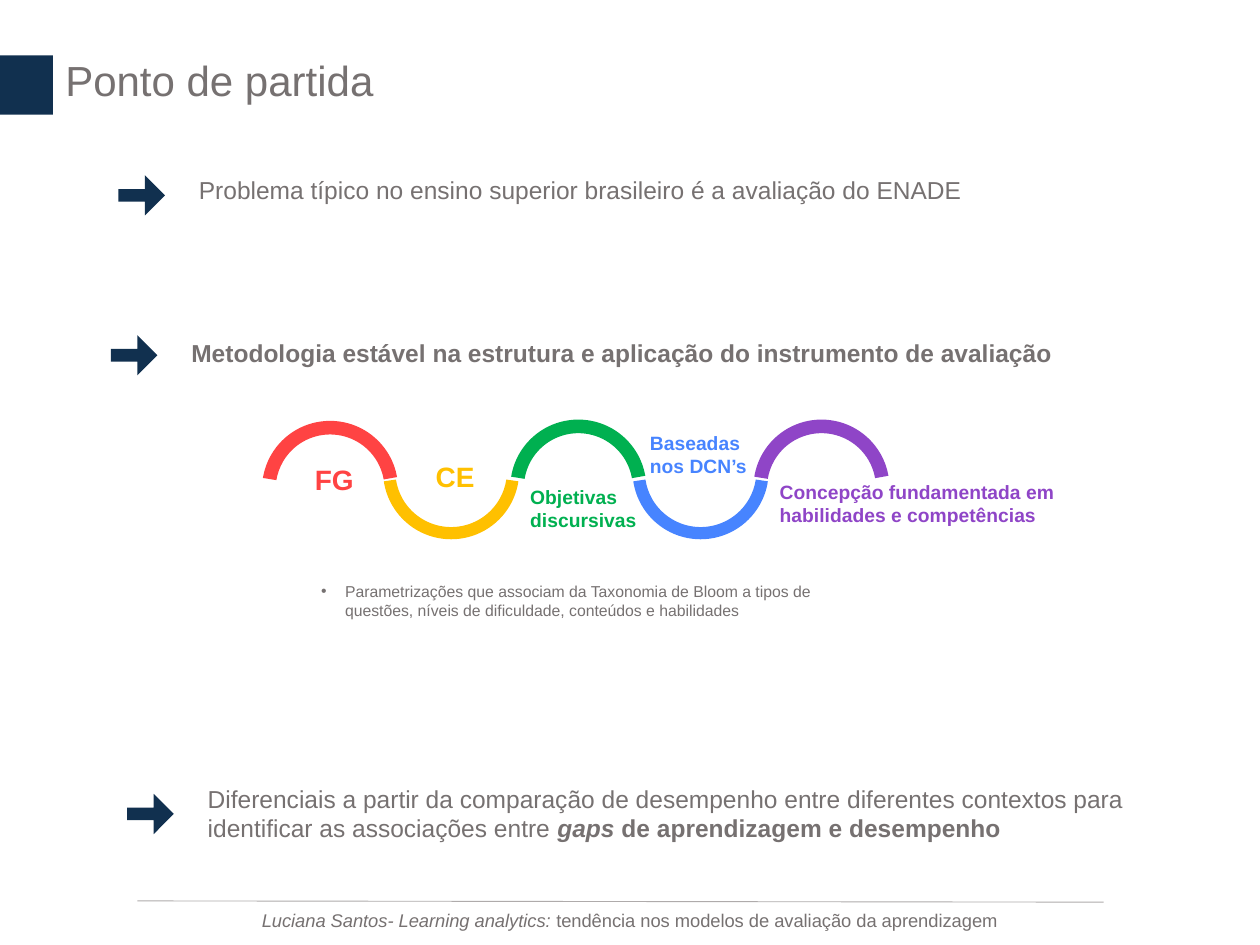
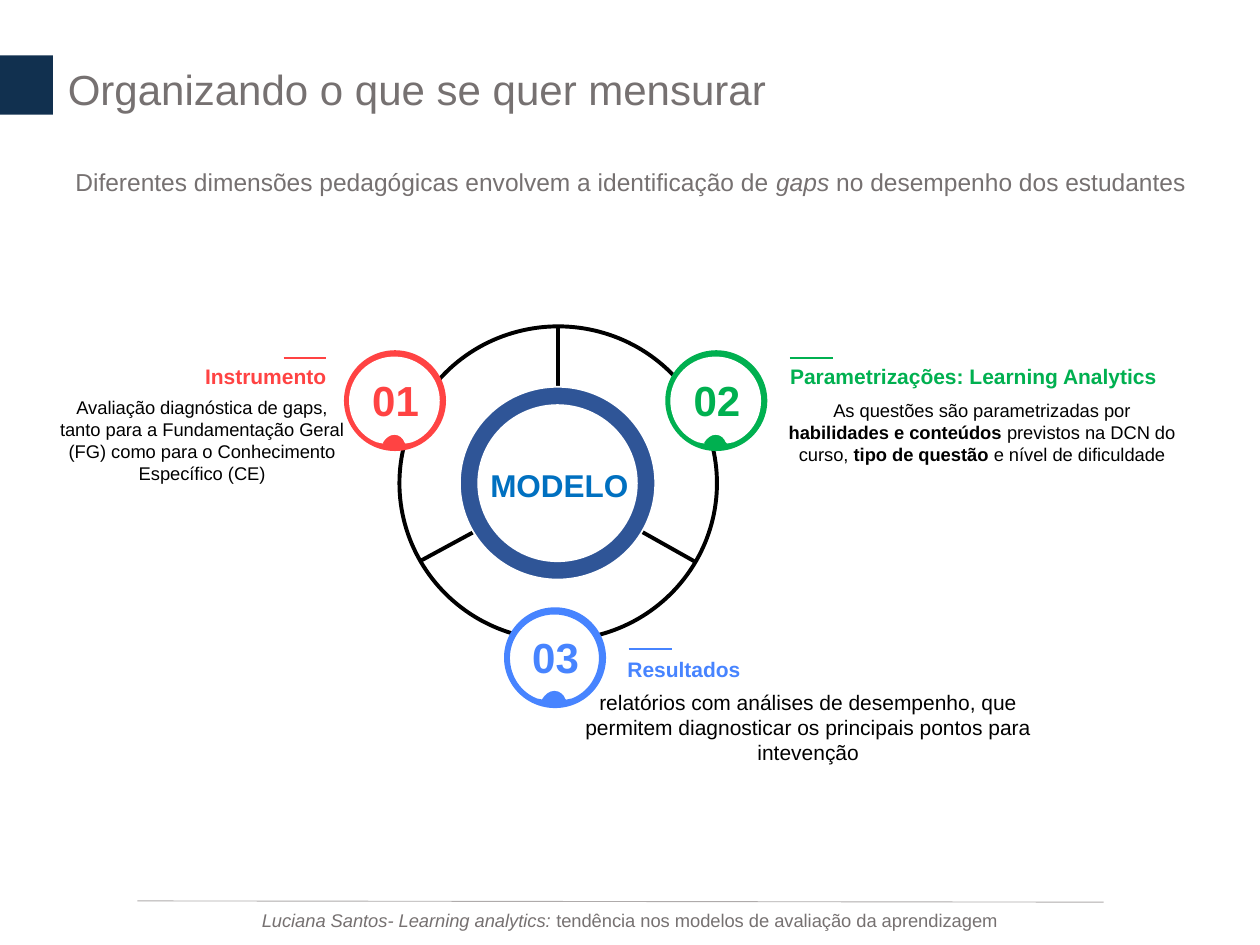
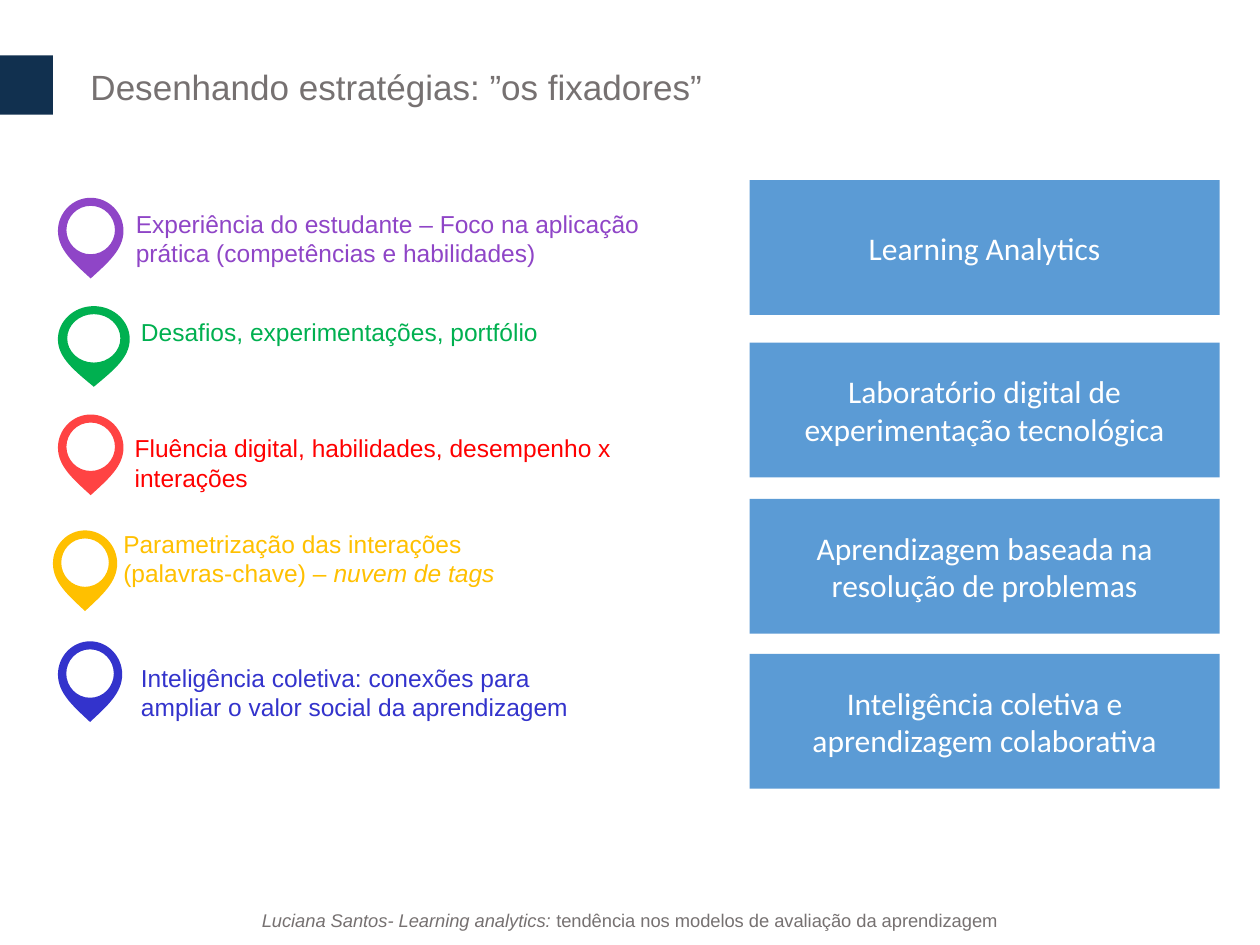
from dataclasses import dataclass

from lxml import etree
from pptx import Presentation
from pptx.dml.color import RGBColor
from pptx.enum import shapes, text
from pptx.oxml.ns import qn
from pptx.util import Inches, Pt

NAVY, GREY, RULE_GREY = "11304F", "767171", "AFABAB"
RED, YELLOW, GREEN, BLUE, PURPLE = "FF4343", "FFC000", "00B050", "4784FF", "8F45C7"
BLACK, WHITE, CARD_BLUE = "000000", "FFFFFF", "5B9BD5"
SHAPE = shapes.MSO_SHAPE
LEFT, CENTER, RIGHT = text.PP_ALIGN.LEFT, text.PP_ALIGN.CENTER, text.PP_ALIGN.RIGHT
TOP, MIDDLE, BOTTOM = text.MSO_ANCHOR.TOP, text.MSO_ANCHOR.MIDDLE, text.MSO_ANCHOR.BOTTOM

Box = tuple[float, float, float, float]
Point = tuple[float, float]
Segment = tuple[Point, ...]


@dataclass(frozen=True)
class Contour:
    """A closed outline; one-point segments are lines, three-point ones are curves."""
    start: Point
    segments: tuple[Segment, ...]


@dataclass(frozen=True)
class Run:
    words: str
    bold: bool = False
    italic: bool = False


@dataclass(frozen=True)
class Style:
    size: float
    color: str = GREY
    bold: bool = False
    align: text.PP_ALIGN = LEFT
    anchor: text.MSO_ANCHOR = TOP
    spacing: float | None = None
    padded: bool = True
    font: str = "Arial"


Words = str | list[Run]


@dataclass(frozen=True)
class Topic:
    left: float
    arrow_top: float
    text_top: float
    height: float
    words: Words
    bold: bool = False


@dataclass(frozen=True)
class WaveStep:
    left: float
    top: float
    color: str
    label: str
    label_box: Box
    size: float = 11


@dataclass(frozen=True)
class Stage:
    number: str
    color: str
    badge: Point
    rule: Point
    heading: str
    heading_box: Box
    detail: Words
    detail_box: Box
    detail_size: float = 10.5
    align: text.PP_ALIGN = LEFT
    rimmed: bool = False


@dataclass(frozen=True)
class Pin:
    left: float
    top: float
    width: float
    color: str
    words: Words
    text_box: Box
    text_color: str


ARROW = Contour((0.21, 0.32), (
    ((0.21, 0.21),), ((0, 0.21),), ((0, 0.11),), ((0.21, 0.11),), ((0.21, 0),), ((0.37, 0.16),)))
NOTCHED_DISC = Contour((0.4, 0.05), (
    ((0.6, 0.05), (0.76, 0.21), (0.76, 0.4)),
    ((0.76, 0.55), (0.67, 0.68), (0.54, 0.73)),
    ((0.49, 0.74),), ((0.48, 0.73),),
    ((0.47, 0.7), (0.44, 0.67), (0.4, 0.67)),
    ((0.36, 0.67), (0.33, 0.7), (0.31, 0.73)),
    ((0.31, 0.74),), ((0.26, 0.73),),
    ((0.13, 0.68), (0.04, 0.55), (0.04, 0.4)),
    ((0.04, 0.21), (0.2, 0.05), (0.4, 0.05))))
# The pin is drawn in a unit square and stretched to its box.
PIN_DROP = Contour((0.5, 0), (
    ((0.22, 0), (0, 0.19), (0, 0.41)),
    ((0, 0.64), (0.23, 0.8), (0.5, 1)),
    ((0.77, 0.8), (1, 0.64), (1, 0.41)),
    ((1, 0.19), (0.78, 0), (0.5, 0))))
PIN_HOLE = Contour((0.5, 0.7), (
    ((0.29, 0.7), (0.13, 0.56), (0.13, 0.4)),
    ((0.13, 0.24), (0.29, 0.1), (0.5, 0.1)),
    ((0.71, 0.1), (0.87, 0.24), (0.87, 0.4)),
    ((0.87, 0.56), (0.71, 0.7), (0.5, 0.7))))


def rgb(color: str) -> RGBColor:
    return RGBColor.from_string(color)


def lengths(*values: float) -> list[int]:
    return [Inches(value) for value in values]


def write(frame, words: Words, style: Style):
    frame.word_wrap = True
    frame.vertical_anchor = style.anchor
    if not style.padded:
        frame.margin_left = frame.margin_right = frame.margin_top = frame.margin_bottom = 0
    paragraph = frame.paragraphs[0]
    paragraph.alignment = style.align
    if style.spacing:
        paragraph.line_spacing = style.spacing
    font = paragraph.font
    font.name, font.size, font.bold = style.font, Pt(style.size), style.bold
    font.color.rgb = rgb(style.color)
    for part in [Run(words)] if isinstance(words, str) else words:
        run = paragraph.add_run()
        run.text = part.words
        if part.bold:
            run.font.bold = True
        if part.italic:
            run.font.italic = True
    return paragraph


def add_text(slide, box: Box, words: Words, style: Style):
    return write(slide.shapes.add_textbox(*lengths(*box)).text_frame, words, style)


def paint(shape, fill: str | None, line: str | None = None, width: float = 1) -> None:
    shape.shadow.inherit = False
    if fill:
        shape.fill.solid()
        shape.fill.fore_color.rgb = rgb(fill)
    else:
        shape.fill.background()
    if line:
        shape.line.color.rgb = rgb(line)
        shape.line.width = Pt(width)
    else:
        shape.line.fill.background()


def add_preset(slide, kind, box: Box, fill: str | None, line: str | None = None,
               width: float = 1, adjustments: tuple[float, ...] = ()):
    shape = slide.shapes.add_shape(kind, *lengths(*box))
    for index, value in enumerate(adjustments):
        shape.adjustments[index] = value
    paint(shape, fill, line, width)
    return shape


def add_line(slide, start: Point, end: Point, color: str, width: float) -> None:
    line = slide.shapes.add_connector(shapes.MSO_CONNECTOR.STRAIGHT, *lengths(*start, *end))
    line.line.color.rgb = rgb(color)
    line.line.width = Pt(width)
    etree.SubElement(line._element.spPr, qn("a:effectLst"))


def add_outline(slide, contours: list[Contour], origin: Point, fill: str,
                line: str | None = None, stretch: Point = (1, 1)) -> None:
    """Draw the contours as one freeform, bending each three-point segment into a curve."""
    def place(point: Point) -> list[int]:
        return lengths(*(o + p * s for o, p, s in zip(origin, point, stretch)))

    builder = slide.shapes.build_freeform(*place(contours[0].start))
    for index, contour in enumerate(contours):
        if index:
            builder.move_to(*place(contour.start))
        builder.add_line_segments([place(p) for segment in contour.segments for p in segment])
    shape = builder.convert_to_shape()
    steps = iter(list(shape._element.iter(qn("a:lnTo"))))
    for contour in contours:
        for segment in contour.segments:
            group = [next(steps) for _ in segment]
            if len(group) == 3:
                curve = etree.Element(qn("a:cubicBezTo"))
                group[0].addprevious(curve)
                for step in group:
                    curve.append(step[0])
                    step.getparent().remove(step)
            next(steps) if segment is contour.segments[-1] and False else None
    paint(shape, fill, line)


def add_slide(deck, title: str, title_box: Box, size: float = 24, ruled: bool = True):
    slide = deck.slides.add_slide(deck.slide_layouts[6])
    add_text(slide, title_box, title, Style(size, anchor=BOTTOM, spacing=0.9))
    add_preset(slide, SHAPE.RECTANGLE, (0, 0.44, 0.42, 0.47), NAVY)
    if ruled:
        add_line(slide, (1.09, 7.15), (8.76, 7.16), RULE_GREY, 0.5)
    footer = [Run("Luciana Santos- Learning analytics: ", italic=True),
              Run("tendência nos modelos de avaliação da aprendizagem")]
    add_text(slide, (0, 7.07, 10, 0.37), footer,
             Style(10.5, align=CENTER, anchor=BOTTOM, spacing=0.9))
    return slide


TOPICS = [
    Topic(0.94, 1.39, 1.34, 0.34,
          "Problema típico no ensino superior brasileiro é a avaliação do ENADE"),
    Topic(0.88, 2.66, 2.63, 0.34,
          "Metodologia estável na estrutura e aplicação do instrumento de avaliação", True),
    Topic(1.01, 6.3, 6.17, 0.57, [
        Run("Diferenciais a partir da comparação de desempenho entre diferentes contextos "
            "para identificar as associações entre "),
        Run("gaps", bold=True, italic=True),
        Run(" de aprendizagem e desempenho", bold=True)]),
]

WAVE = [
    WaveStep(2.08, 3.34, RED, "FG", (2.4, 3.62, 0.59, 0.37), 16),
    WaveStep(3.04, 3.2, YELLOW, "CE", (3.36, 3.6, 0.59, 0.37), 16),
    WaveStep(4.05, 3.33, GREEN, "Objetivas discursivas", (4.11, 3.8, 1.31, 0.47)),
    WaveStep(5.02, 3.2, BLUE, "Baseadas nos DCN’s", (5.06, 3.37, 1.18, 0.47)),
    WaveStep(5.98, 3.33, PURPLE, "Concepção fundamentada em habilidades e competências",
             (6.09, 3.76, 2.5, 0.47)),
]

STAGES = [
    Stage("01", RED, (2.73, 2.78), (2.25, 2.84), "Instrumento",
          (0.15, 2.91, 2.44, 0.18),
          "Avaliação diagnóstica de gaps, tanto para a Fundamentação Geral (FG) "
          "como para o Conhecimento Específico (CE)",
          (0.44, 3.14, 2.33, 0.71), align=RIGHT),
    Stage("02", GREEN, (5.28, 2.78), (6.27, 2.84), "Parametrizações: Learning Analytics",
          (6.27, 2.91, 3.19, 0.18),
          [Run("As questões são parametrizadas por "),
           Run("habilidades e conteúdos ", bold=True),
           Run("previstos na DCN do curso, "),
           Run("tipo de questão ", bold=True),
           Run("e nível de dificuldade")],
          (6.21, 3.17, 3.17, 0.53)),
    Stage("03", BLUE, (4, 4.82), (4.99, 5.15), "Resultados",
          (4.98, 5.23, 2.44, 0.18),
          "relatórios com análises de desempenho, que permitem diagnosticar "
          "os principais pontos para intevenção",
          (4.4, 5.47, 4.03, 0.61), 12, rimmed=True),
]

PINS = [
    Pin(0.46, 1.57, 0.52, PURPLE,
        "Experiência do estudante – Foco na aplicação prática (competências e habilidades)",
        (0.98, 1.61, 4.46, 0.57), PURPLE),
    Pin(0.46, 2.43, 0.57, GREEN, "Desafios, experimentações, portfólio",
        (1.02, 2.47, 4.09, 0.34), GREEN),
    Pin(0.46, 3.29, 0.52, RED, "Fluência digital, habilidades, desempenho x interações",
        (0.97, 3.39, 4.92, 0.34), "FF0000"),
    Pin(0.42, 4.21, 0.51, YELLOW,
        [Run("Parametrização das interações (palavras-chave) – "),
         Run("nuvem de tags", italic=True)],
        (0.88, 4.15, 3.68, 0.57), YELLOW),
    Pin(0.46, 5.09, 0.51, "3333CC",
        "Inteligência coletiva: conexões para ampliar o valor social da aprendizagem",
        (1.02, 5.21, 3.85, 0.57), "3333CC"),
]

STRATEGIES = {
    2.72: "Laboratório digital de experimentação tecnológica",
    1.43: "Learning Analytics",
    3.96: "Aprendizagem baseada na resolução de problemas",
    5.19: "Inteligência coletiva e aprendizagem colaborativa",
}


def draw_topic(slide, topic: Topic) -> None:
    add_text(slide, (topic.left + 0.54, topic.text_top, 7.59, topic.height), topic.words,
             Style(14, bold=topic.bold))
    add_outline(slide, [ARROW], (topic.left, topic.arrow_top), NAVY)


def draw_wave_step(slide, step: WaveStep, dips: bool) -> None:
    half_ring = add_preset(slide, SHAPE.BLOCK_ARC, (step.left, step.top, 1.08, 1.08), step.color,
                           adjustments=(113.11, 210.89, 0.09) if dips else (113.54, 210.01, 0.1))
    half_ring.rotation = 180 if dips else 0
    add_text(slide, step.label_box, step.label, Style(step.size, step.color, bold=True))


def draw_badge(slide, stage: Stage) -> None:
    add_preset(slide, SHAPE.OVAL, (*stage.badge, 0.81, 0.8), stage.color)
    add_outline(slide, [NOTCHED_DISC], stage.badge, WHITE, stage.color if stage.rimmed else None)


def draw_number(slide, stage: Stage) -> None:
    left, top = stage.badge
    add_text(slide, (left + 0.06, top - 0.2, 0.7, 0.79), stage.number,
             Style(24, stage.color, bold=True, align=CENTER, anchor=BOTTOM, padded=False))


def draw_caption(slide, stage: Stage) -> None:
    rule_left, rule_top = stage.rule
    add_line(slide, stage.rule, (rule_left + 0.34, rule_top), stage.color, 1)
    add_text(slide, stage.heading_box, stage.heading,
             Style(12, stage.color, bold=True, align=stage.align, spacing=0.9, padded=False))
    add_text(slide, stage.detail_box, stage.detail,
             Style(stage.detail_size, BLACK, align=CENTER, padded=False))


def draw_pin(slide, pin: Pin) -> None:
    add_text(slide, pin.text_box, pin.words, Style(14, pin.text_color))
    add_outline(slide, [PIN_DROP, PIN_HOLE], (pin.left, pin.top), pin.color,
                stretch=(pin.width, 0.64))


def build_starting_point(deck) -> None:
    slide = add_slide(deck, "Ponto de partida", (0.42, 0.42, 10, 0.47))
    for topic in TOPICS:
        draw_topic(slide, topic)
    for index, step in enumerate(WAVE):
        draw_wave_step(slide, step, dips=index % 2 == 1)
    note = add_text(slide, (2.45, 4.57, 4.22, 0.4),
                    "Parametrizações que associam da Taxonomia de Bloom a tipos de questões, "
                    "níveis de dificuldade, conteúdos e habilidades", Style(9))
    properties = note._p.get_or_add_pPr()
    properties.set("marL", str(Inches(0.19)))
    properties.set("indent", str(-Inches(0.19)))
    properties.insert(0, etree.Element(qn("a:buFont"), typeface="Arial"))
    properties.insert(1, etree.Element(qn("a:buChar"), char="•"))


def build_model(deck) -> None:
    slide = add_slide(deck, "Organizando o que se quer mensurar", (0.44, 0.49, 10, 0.47))
    add_text(slide, (0.5, 1.28, 9.05, 0.34),
             [Run("Diferentes dimensões pedagógicas envolvem a identificação de "),
              Run("gaps ", italic=True), Run("no desempenho dos estudantes")], Style(14))
    add_preset(slide, SHAPE.OVAL, (3.17, 2.59, 2.52, 2.49), None, BLACK, 2.25)
    for start, end in [((4.43, 3.13), (4.43, 2.59)), ((3.34, 4.45), (3.82, 4.19)),
                       ((5.52, 4.46), (5.04, 4.19))]:
        add_line(slide, start, end, BLACK, 2.25)
    add_preset(slide, SHAPE.DONUT, (3.65, 3.07, 1.55, 1.53), "2F5597", WHITE,
               adjustments=(0.095,))
    add_text(slide, (3.89, 3.7, 1.1, 0.3), "MODELO",
             Style(18, "0070C0", bold=True, align=CENTER, anchor=MIDDLE, padded=False))
    for draw in (draw_badge, draw_number, draw_caption):
        for stage in STAGES:
            draw(slide, stage)


def build_strategies(deck) -> None:
    slide = add_slide(deck, "Desenhando estratégias: ”os fixadores”", (0.62, 0.12, 10, 0.79), 20,
                      ruled=False)
    for pin in PINS:
        draw_pin(slide, pin)
    for top, strategy in STRATEGIES.items():
        card = add_preset(slide, SHAPE.RECTANGLE, (5.95, top, 3.73, 1.07), CARD_BLUE)
        write(card.text_frame, strategy,
              Style(18, WHITE, align=CENTER, anchor=MIDDLE, font="Calibri"))


def main() -> None:
    deck = Presentation()
    deck.slide_width, deck.slide_height = lengths(10, 7.5)
    build_starting_point(deck)
    build_model(deck)
    build_strategies(deck)
    deck.save("out.pptx")


if __name__ == "__main__":
    main()
